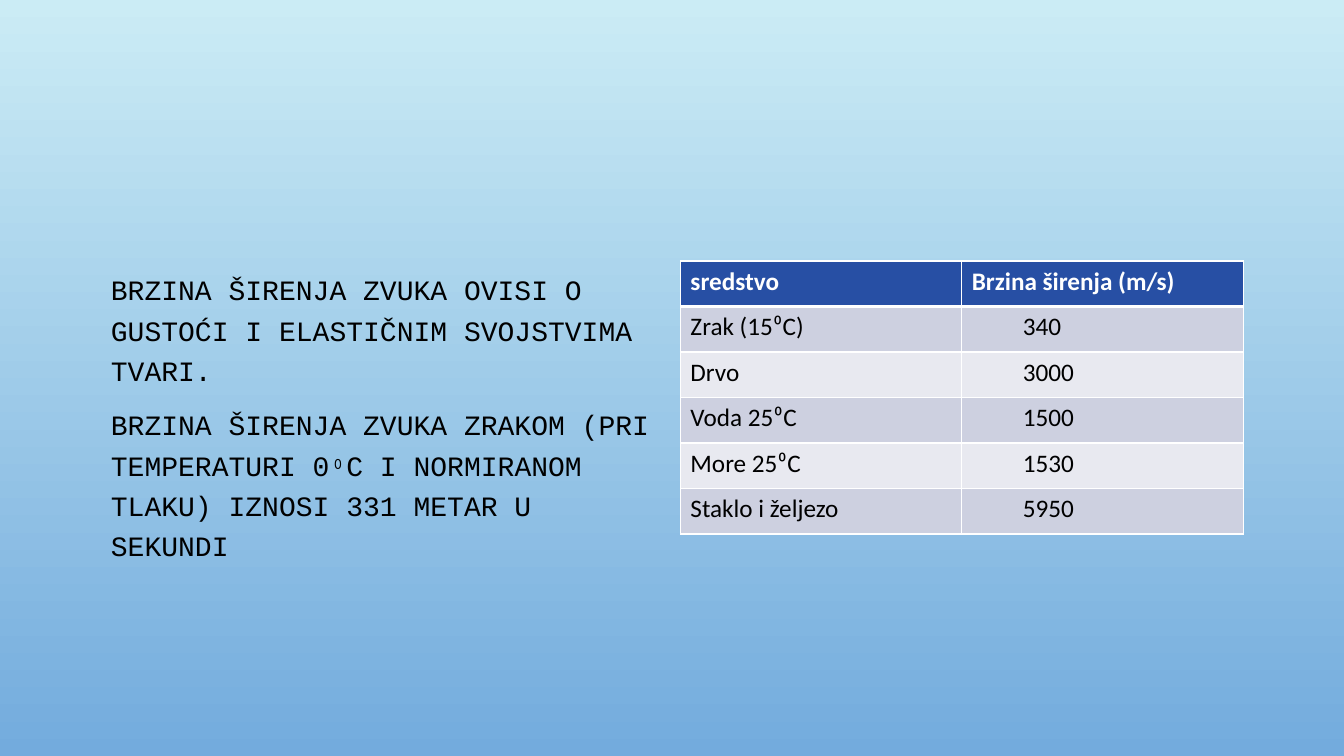
from lxml.etree import SubElement
from pptx import Presentation
from pptx.dml.color import RGBColor
from pptx.enum.text import MSO_ANCHOR, MSO_AUTO_SIZE
from pptx.oxml import parse_xml
from pptx.oxml.ns import nsdecls, qn
from pptx.util import Pt

STATEMENTS = [
    "BRZINA ŠIRENJA ZVUKA OVISI O GUSTOĆI I ELASTIČNIM SVOJSTVIMA TVARI.",
    "BRZINA ŠIRENJA ZVUKA ZRAKOM (PRI TEMPERATURI 0⁰C I NORMIRANOM TLAKU) "
    "IZNOSI 331 METAR U SEKUNDI",
]
SPEEDS = [
    ("sredstvo", "Brzina širenja (m/s)"),
    ("Zrak (15⁰C)", "340"),
    ("Drvo", "3000"),
    ("Voda 25⁰C", "1500"),
    ("More 25⁰C", "1530"),
    ("Staklo i željezo", "5950"),
]

SKY_TOP = RGBColor(0xCB, 0xEC, 0xF5)
SKY_BOTTOM = RGBColor(0x73, 0xAB, 0xDD)
HEADER_BLUE = RGBColor(0x27, 0x4F, 0xA4)
BAND_DARK = RGBColor(0xCD, 0xD0, 0xE0)
BAND_LIGHT = RGBColor(0xE8, 0xE9, 0xF0)
WHITE = RGBColor(0xFF, 0xFF, 0xFF)
BLACK = RGBColor(0, 0, 0)

PAGE_WIDTH, PAGE_HEIGHT = 960, 540
MARGIN = 72
CONTENT_TOP = 186.5
COLUMN_WIDTH = 402
BODY_HEIGHT = 269.5
ROW_HEIGHT = 32.5
CELL_MARGIN = 7.2
NUMBER_INDENT = 36.5


def paint_background(page):
    fill = page.background.fill
    fill.gradient()
    fill.gradient_angle = 270
    for stop, color in zip(fill.gradient_stops, (SKY_TOP, SKY_BOTTOM)):
        stop.color.rgb = color


def style_font(font, name, size, color, bold=False):
    font.name = name
    font.size = Pt(size)
    font.color.rgb = color
    font.bold = bold


def write_statements(body):
    body.left, body.top = Pt(MARGIN), Pt(CONTENT_TOP)
    body.width, body.height = Pt(COLUMN_WIDTH), Pt(BODY_HEIGHT)
    frame = body.text_frame
    frame.text = "\n".join(STATEMENTS)
    frame.word_wrap = True
    frame.auto_size = MSO_AUTO_SIZE.NONE
    frame.vertical_anchor = MSO_ANCHOR.TOP
    for index, para in enumerate(frame.paragraphs):
        para.line_spacing = 1.2
        para.space_before = Pt(10 if index else 0)
        properties = para._p.get_or_add_pPr()
        properties.set("marL", "0")
        properties.set("indent", "0")
        SubElement(properties, qn("a:buNone"))
        for span in para.runs:
            style_font(span.font, "Courier New", 20, BLACK)


def add_borders(cell, top_width, bottom_width):
    widths = {"lnL": 1, "lnR": 1, "lnT": top_width, "lnB": bottom_width}
    properties = cell._tc.get_or_add_tcPr()
    for position, (side, width) in enumerate(widths.items()):
        border = parse_xml(
            f'<a:{side} {nsdecls("a")} w="{Pt(width)}"><a:solidFill>'
            f'<a:srgbClr val="{WHITE}"/></a:solidFill></a:{side}>'
        )
        properties.insert(position, border)


def add_speed_table(page):
    table = page.shapes.add_table(
        len(SPEEDS), 2,
        Pt(PAGE_WIDTH - MARGIN - COLUMN_WIDTH), Pt(CONTENT_TOP),
        Pt(COLUMN_WIDTH), Pt(ROW_HEIGHT * len(SPEEDS)),
    ).table
    for row_index, texts in enumerate(SPEEDS):
        is_header = row_index == 0
        band = BAND_DARK if row_index % 2 else BAND_LIGHT
        for column_index, text in enumerate(texts):
            cell = table.cell(row_index, column_index)
            cell.text = text
            is_number = column_index == 1 and not is_header
            cell.margin_left = Pt(CELL_MARGIN + (NUMBER_INDENT if is_number else 0))
            cell.fill.solid()
            cell.fill.fore_color.rgb = HEADER_BLUE if is_header else band
            span = cell.text_frame.paragraphs[0].runs[0]
            style_font(span.font, "Calibri", 18, WHITE if is_header else BLACK, is_header)
            add_borders(cell, 3 if row_index == 1 else 1, 3 if is_header else 1)


def main():
    deck = Presentation()
    deck.slide_width, deck.slide_height = Pt(PAGE_WIDTH), Pt(PAGE_HEIGHT)
    page = deck.slides.add_slide(deck.slide_layouts[1])
    title = page.shapes.title
    title.element.getparent().remove(title.element)
    paint_background(page)
    write_statements(page.placeholders[1])
    add_speed_table(page)
    deck.save("out.pptx")


if __name__ == "__main__":
    main()
